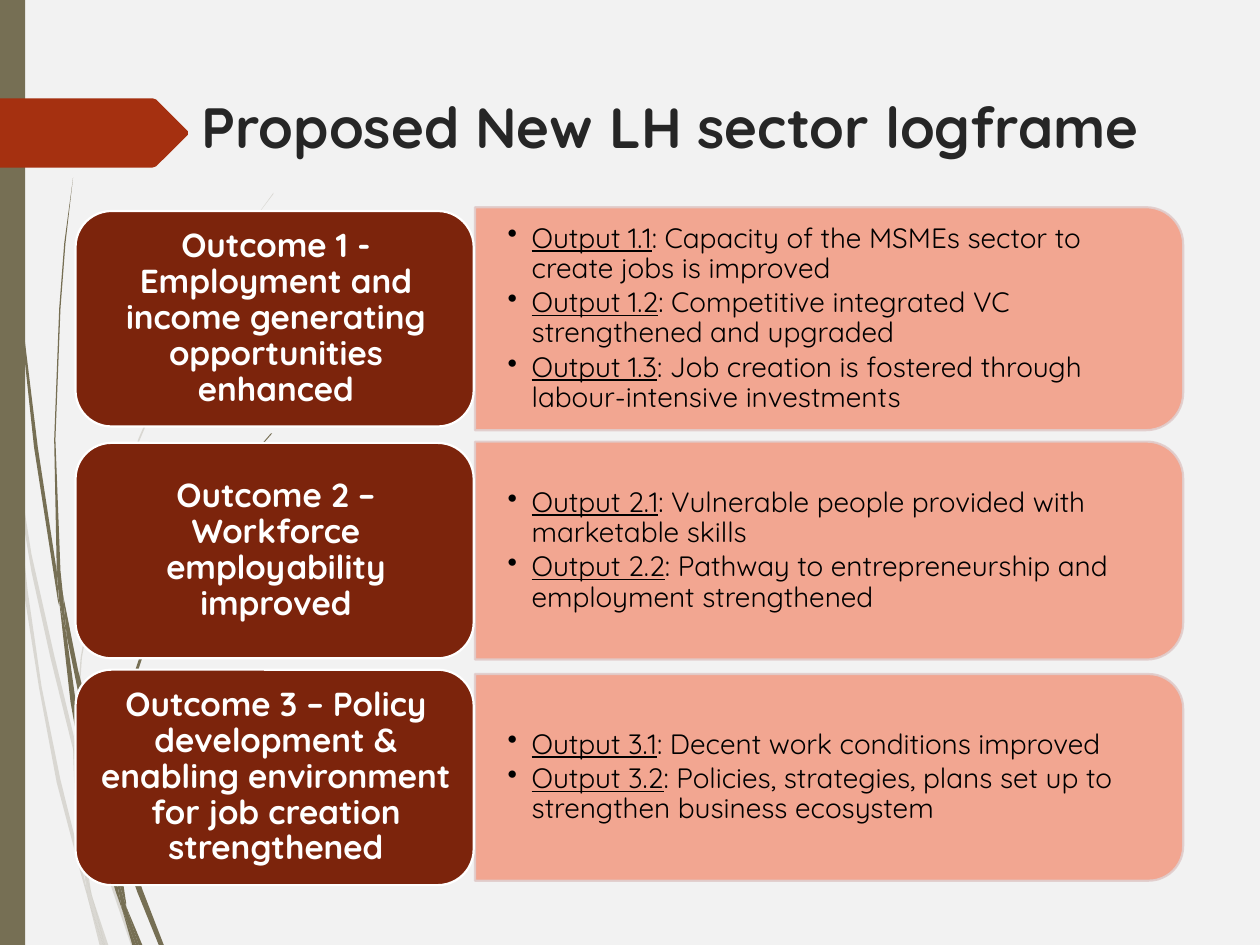
import pptx
import pptx.dml.color
import pptx.enum.shapes
import pptx.enum.text
import pptx.oxml.ns
import pptx.util
from lxml import etree

SHAPES = pptx.enum.shapes.MSO_SHAPE
ANCHORS = pptx.enum.text.MSO_ANCHOR
FONT = "Quicksand"
OLIVE, RED, BROWN, PINK = "766F54", "A53010", "7C240C", "F39E87"

PALE_STEMS = [
    [(.08, 3.5), (.06, 3.22), (0, 2.82), (0, 2.99), (.07, 3.44)],
    [(.4, 5.22), (.59, 5.99), (.59, 5.86), (.43, 5.2), (.25, 4.4), (.1, 3.45), (.12, 3.76), (.25, 4.54)],
    [(.64, 6.07), (.61, 5.96), (.61, 6.1), (.85, 6.94), (1.04, 7.5), (1.08, 7.5), (.88, 6.92)],
    [(.83, 7.5), (.86, 7.5), (.73, 7.11)],
    [(.64, 6.83), (.48, 6.19), (.33, 5.45), (.22, 4.69), (.12, 3.76), (.08, 3.5), (.19, 4.7),
     (.31, 5.46), (.45, 6.21), (.64, 6.93), (.7, 7.14), (.69, 7.07)],
    [(.58, 5.99), (.6, 6.46), (.64, 6.83), (.67, 6.92), (.73, 7.11), (.72, 7.06), (.63, 6.46), (.61, 6.1)],
    [(.61, 5.84), (.65, 5.22), (.76, 4.62), (.92, 4.05), (1.11, 3.49), (1.34, 2.95), (1.59, 2.45),
     (1.87, 1.98), (2.01, 1.75), (2.17, 1.54), (2.17, 1.53), (2.01, 1.75), (1.86, 1.97), (1.58, 2.44),
     (1.33, 2.95), (1.1, 3.48), (.91, 4.04), (.75, 4.61), (.64, 5.22), (.59, 5.84), (.61, 5.96)],
    [(.7, 7.14), (.79, 7.5), (.82, 7.5)],
    [(.61, 6.08), (.61, 5.96), (.59, 5.86), (.58, 5.99)],
    [(.67, 6.92), (.65, 6.83), (.69, 7.07), (.7, 7.14), (.82, 7.5), (.83, 7.5), (.73, 7.11)],
]
DARK_STEMS = [
    [(.05, 1.1), (.14, 2.33), (.27, 3.55), (.46, 4.77), (.47, 4.81), (.45, 4.53), (.3, 3.55),
     (.15, 2.32), (.06, 1.09), (.04, .48), (.03, 0), (.02, 0), (.03, .48)],
    [(.73, 5.92), (.88, 6.45), (.88, 6.31), (.77, 5.9), (.62, 5.32), (.5, 4.72), (.53, 5.05), (.62, 5.49)],
    [(.94, 6.49), (.91, 6.41), (.91, 6.56), (1.09, 7.08), (1.26, 7.5), (1.3, 7.5), (1.13, 7.06)],
    [(.91, 6.91), (.81, 6.57), (.69, 6.07), (.6, 5.56), (.53, 5.05), (.47, 4.77), (.56, 5.57),
     (.65, 6.08), (.77, 6.59), (.92, 7.08), (.97, 7.22), (.96, 7.17)],
    [(.5, 4.72), (.48, 4.53), (.44, 3.49), (.48, 2.45), (.52, 1.93), (.58, 1.41), (.51, 1.93),
     (.47, 2.45), (.43, 3.49), (.45, 4.49), (.49, 4.72)],
    [(1.1, 7.5), (1.13, 7.5), (1, 7.19)],
    [(.47, 4.77), (.53, 5.05), (.5, 4.72), (.45, 4.49), (.45, 4.53)],
    [(.91, 6.33), (.94, 5.92), (1.03, 5.52), (1.16, 5.13), (1.31, 4.76), (1.49, 4.4), (1.69, 4.06),
     (1.91, 3.74), (2.03, 3.59), (2.16, 3.44), (2.15, 3.44), (2.03, 3.58), (1.91, 3.73), (1.68, 4.05),
     (1.48, 4.39), (1.29, 4.74), (1.14, 5.12), (1.01, 5.51), (.92, 5.91), (.88, 6.31), (.91, 6.41)],
    [(.97, 7.22), (1.05, 7.5), (1.08, 7.5)],
    [(.88, 6.45), (.91, 6.91), (.96, 7.06), (1, 7.19), (1, 7.16), (.91, 6.56), (.9, 6.51)],
    [(.96, 7.06), (.91, 6.91), (.96, 7.17), (.97, 7.22), (1.08, 7.5), (1.1, 7.5), (1, 7.19)],
]
ARROW = [(0, .78), (1.21, .78), (1.24, .79), (1.49, 1.04), (1.49, 1.07), (1.24, 1.32), (1.21, 1.33), (0, 1.33)]

ROWS = [
    (2.53, 1.77, "Outcome 1 - Employment and income generating opportunities enhanced", [
        ("Output 1.1", ": Capacity of the MSMEs sector to create jobs is improved"),
        ("Output 1.2", ": Competitive integrated VC strengthened and upgraded"),
        ("Output 1.3", ": Job creation is fostered through labour-intensive investments")]),
    (4.37, 1.73, "Outcome 2 – Workforce employability improved", [
        ("Output 2.1", ": Vulnerable people provided with marketable skills"),
        ("Output 2.2", ": Pathway to entrepreneurship and employment strengthened")]),
    (6.17, 1.64, "Outcome 3 – Policy development & enabling environment for job creation strengthened", [
        ("Output 3.1", ": Decent work conditions improved"),
        ("Output 3.2", ": Policies, strategies, plans set up to strengthen business ecosystem")]),
]


def inches(*lengths):
    """Convert lengths in inches to slide units."""
    return [pptx.util.Inches(length) for length in lengths]


def rgb(code):
    """Turn a hex string into a colour."""
    return pptx.dml.color.RGBColor.from_string(code)


def paint(fill, code, alpha=100):
    """Give a fill one solid colour with an opacity in percent."""
    fill.solid()
    fill.fore_color.rgb = rgb(code)
    if alpha < 100:
        for color in fill._xPr.iter(pptx.oxml.ns.qn("a:srgbClr")):
            etree.SubElement(color, pptx.oxml.ns.qn("a:alpha"), val=str(alpha * 1000))


def style(shape, code, alpha=100, border=None):
    """Set fill and border of a shape and drop its shadow."""
    shape.shadow.inherit = False
    if border:
        paint(shape.line.fill, border, alpha)
        shape.line.width = pptx.util.Pt(1.25)
    else:
        shape.line.fill.background()
    paint(shape.fill, code, alpha)


def add_outline(page, points, code, alpha=100):
    """Draw a closed filled outline."""
    corners = [tuple(inches(*point)) for point in points]
    builder = page.shapes.build_freeform(*corners[0], scale=1.0)
    builder.add_line_segments(corners[1:], close=True)
    style(builder.convert_to_shape(), code, alpha)


def add_box(page, place, insets, anchor=ANCHORS.MIDDLE):
    """Add a wrapping text box and return its text frame."""
    frame = page.shapes.add_textbox(*inches(*place)).text_frame
    frame.word_wrap = True
    frame.vertical_anchor = anchor
    frame.margin_left = frame.margin_right = pptx.util.Inches(insets[0])
    frame.margin_top = frame.margin_bottom = pptx.util.Inches(insets[1])
    return frame


def add_span(para, text, size, code, bold=False, underline=False):
    """Append one formatted run."""
    span = para.add_run()
    span.text = text
    span.font.name, span.font.size = FONT, pptx.util.Pt(size)
    span.font.bold, span.font.underline = bold, underline
    span.font.color.rgb = rgb(code)


def set_bullet(para, indent):
    """Give a paragraph a hanging round bullet."""
    properties = para._p.get_or_add_pPr()
    properties.set("marL", str(pptx.util.Inches(indent)))
    properties.set("indent", str(-pptx.util.Inches(indent)))
    etree.SubElement(properties, pptx.oxml.ns.qn("a:buChar"), char="•")


def add_outputs(page, middle, height, outputs):
    """Draw the panel rounded on its right side and its bullet list."""
    length, center = 5.62, 6.58
    place = (center - height / 2, middle - length / 2, height, length)
    panel = page.shapes.add_shape(SHAPES.ROUND_2_SAME_RECTANGLE, *inches(*place))
    panel.rotation = 90
    style(panel, PINK, 90, "E1CDCC")
    depth = height - 0.17
    frame = add_box(page, (3.76, middle - depth / 2, 5.54, depth), (0.27, 0.14))
    for index, (label, text) in enumerate(outputs):
        para = frame.add_paragraph() if index else frame.paragraphs[0]
        para.line_spacing, para.space_after = 0.9, pptx.util.Pt(2.4)
        set_bullet(para, 0.19)
        add_span(para, label, 16, "000000", underline=True)
        add_span(para, text, 16, "000000")


def add_outcome(page, middle, text):
    """Draw the rounded outcome card with its centred heading."""
    height, depth = 1.71, 1.54
    card = page.shapes.add_shape(SHAPES.ROUNDED_RECTANGLE, *inches(0.6, middle - height / 2, 3.16, height))
    style(card, BROWN, border="FFFFFF")
    para = add_box(page, (0.69, middle - depth / 2, 3, depth), (0.08, 0.04)).paragraphs[0]
    para.alignment = pptx.enum.text.PP_ALIGN.CENTER
    para.line_spacing = 0.9
    add_span(para, text, 19, "FFFFFF", bold=True)


def add_backdrop(page):
    """Draw the grass stems, the side band and the title arrow."""
    paint(page.background.fill, "F2F2F2")
    for stems, alpha in ((PALE_STEMS, 20), (DARK_STEMS, 100)):
        for stem in stems:
            add_outline(page, stem, OLIVE, alpha)
    style(page.shapes.add_shape(SHAPES.RECTANGLE, *inches(0, 0, 0.2, 7.5)), OLIVE)
    add_outline(page, ARROW, RED)


def main():
    """Build the logframe slide."""
    deck = pptx.Presentation()
    deck.slide_width, deck.slide_height = inches(10, 7.5)
    page = deck.slides.add_slide(deck.slide_layouts[6])
    add_backdrop(page)
    title = add_box(page, (1.5, 0.68, 8.25, 1.15), (0.1, 0.05), ANCHORS.TOP)
    add_span(title.paragraphs[0], "Proposed New LH sector logframe", 32.4, "262626", bold=True)
    for middle, height, outcome, outputs in ROWS:
        add_outputs(page, middle, height, outputs)
        add_outcome(page, middle, outcome)
    deck.save("out.pptx")


if __name__ == "__main__":
    main()
